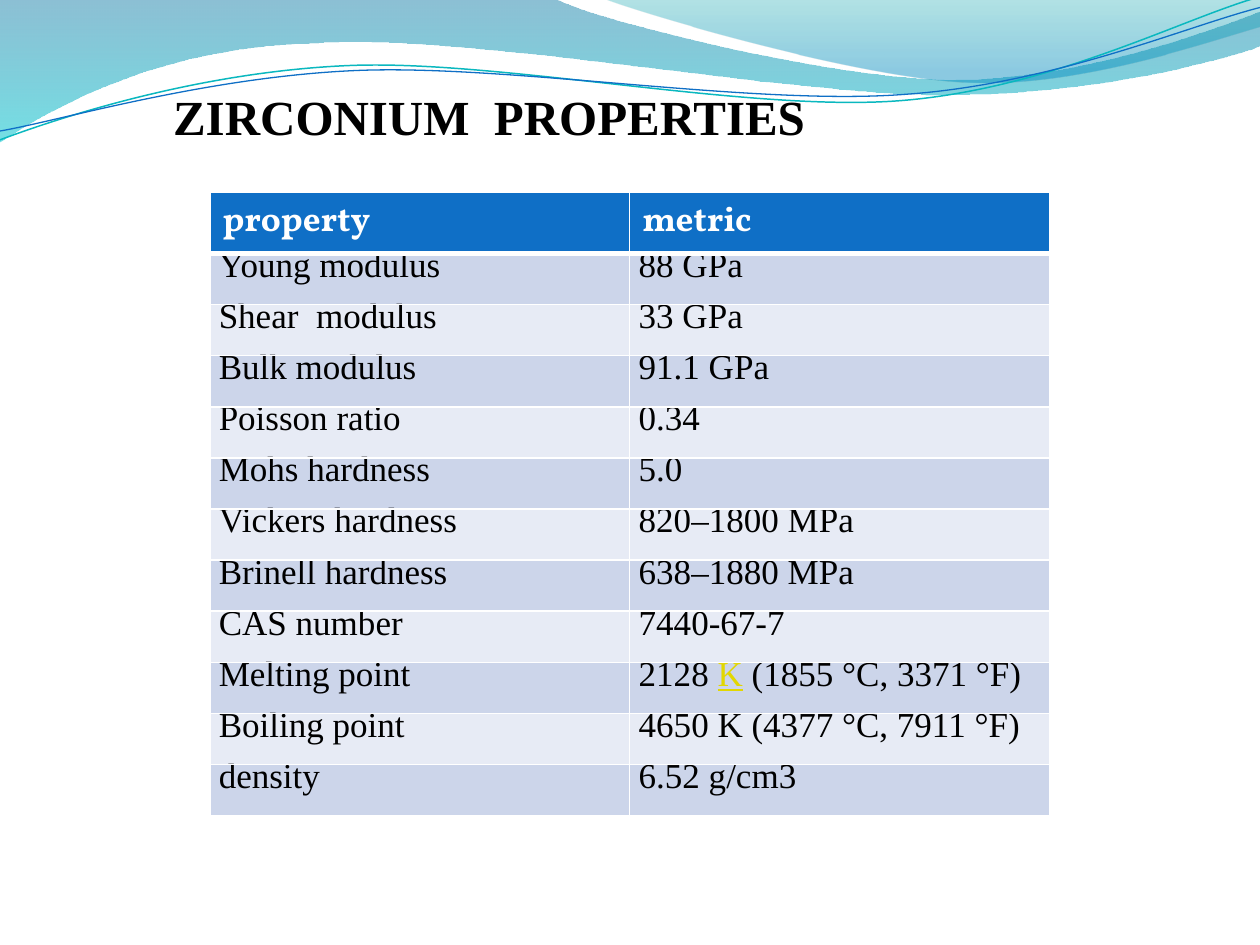
from math import cos, radians, sin

from lxml.etree import SubElement
from pptx import Presentation
from pptx.dml.color import RGBColor
from pptx.enum.text import MSO_ANCHOR, MSO_AUTO_SIZE, PP_ALIGN
from pptx.oxml import parse_xml
from pptx.oxml.ns import nsdecls, qn
from pptx.util import Cm, Pt

COLORS = {
    "head": "0F6FC6", "odd": "CCD5EA", "even": "E7EBF5",
    "white": "FFFFFF", "text": "000000", "link": "E2D700",
}
SERIF, HEAD = "Times New Roman", "Vollkorn"
TITLE = "ZIRCONIUM  PROPERTIES"
HEADER = ("property", "metric")
LINK = "K"
# A tuple holds the runs of a cell that is not uniform
ROWS = [
    ("Young modulus", "88 GPa"),
    ("Shear  modulus", "33 GPa"),
    ("Bulk modulus", "91.1 GPa"),
    ("Poisson ratio", "0.34"),
    ("Mohs hardness", "5.0"),
    ("Vickers hardness", "820–1800 MPa"),
    ("Brinell hardness", "638–1880 MPa"),
    ("CAS number", "7440-67-7"),
    ("Melting point", ("2128 ", LINK, " (1855 °C, 3371 °F)")),
    ("Boiling point", "4650 K (4377 °C, 7911 °F)"),
    ("density", "6.52 g/cm3"),
]

# Wave outlines in inches: a pair is a corner, six numbers are a Bezier curve
BANDS = [
    ([(0, 0), (4.4, -0.01), (4.76, 0.17, 6.64, 0.63, 7.58, 0.63),
      (8.53, 0.63, 9.58, 0.26, 10, 0.09), (10.01, 0.36),
      (9.83, 0.44, 8.7, 0.76, 7.46, 0.75), (6.22, 0.75, 3.82, 0.28, 2.57, 0.34),
      (1.29, 0.36, 0.46, 0.83, -0.01, 1.13), (0, 0)],
     [(0, "0074A1", 45), (1, "00C6CF", 55)]),
    ([(4.79, -0.01), (5.09, 0.11, 6.82, 0.62, 7.69, 0.65),
      (8.56, 0.69, 9.61, 0.32, 10, 0.21), (10, 0), (4.79, -0.01)],
     [(0, "00A1A9", 30), (0.8, "008BBF", 45)]),
]
# Each line: outline as it lies on the slide, its centre, colour and width
LINES = [
    ([(0, 1.11), (0.48, 0.93, 1.58, 0.57, 2.77, 0.52),
      (3.95, 0.47, 5.93, 0.89, 7.13, 0.8), (8.33, 0.71, 9.38, 0.15, 9.98, -0.02)],
     (4.99, 0.58), "0AB8BF", 0.85),
    ([(0, 1.04), (0.47, 0.96, 1.64, 0.61, 2.83, 0.56),
      (4.03, 0.51, 5.97, 0.84, 7.17, 0.75), (8.36, 0.67, 9.41, 0.21, 10, 0.06)],
     (5, 0.59), "0F6FC6", 0.75),
]
TILT = 2.7


def rgb(code):
    return RGBColor.from_string(code)


def turn(part, mid):
    """Turn the points of a part clockwise by TILT about mid."""
    c, s = cos(radians(TILT)), sin(radians(TILT))
    flat = []
    for x, y in zip(part[::2], part[1::2]):
        dx, dy = x - mid[0], y - mid[1]
        flat += [mid[0] + dx * c - dy * s, mid[1] + dx * s + dy * c]
    return tuple(flat)


def draw(slide, parts, close):
    """Build the outline from all points, then join triples into curves."""
    start, *rest = [(Cm(2.54 * x), Cm(2.54 * y)) for part in parts
                    for x, y in zip(part[::2], part[1::2])]
    pen = slide.shapes.build_freeform(*start)
    pen.add_line_segments(rest, close=close)
    shape = pen.convert_to_shape()
    shape.shadow.inherit = False
    legs = iter(list(shape.element.iter(qn("a:lnTo"))))
    for part in parts[1:]:
        leg = next(legs)
        if len(part) == 6:
            leg.addprevious(parse_xml(f'<a:cubicBezTo {nsdecls("a")}/>'))
            curve = leg.getprevious()
            for piece in (leg, next(legs), next(legs)):
                curve.append(piece[0])
                piece.getparent().remove(piece)
    return shape


def style(run, font, size, color, bold=False):
    run.font.name, run.font.size, run.font.bold = font, Pt(size), bold
    run.font.color.rgb = rgb(color)


def border(cell, top, bottom):
    props = cell._tc.get_or_add_tcPr()
    for spot, (side, width) in enumerate(zip("LRTB", (1, 1, top, bottom))):
        props.insert(spot, parse_xml(
            f'<a:ln{side} {nsdecls("a")} w="{Pt(width)}"><a:solidFill>'
            f'<a:srgbClr val="{COLORS["white"]}"/></a:solidFill></a:ln{side}>'))


def fill_cell(cell, value, row):
    pieces = (value,) if isinstance(value, str) else value
    para = cell.text_frame.paragraphs[0]
    for piece in pieces:
        run = para.add_run()
        run.text = piece
        if row == 0:
            style(run, HEAD, 20, COLORS["white"], True)
        else:
            style(run, SERIF, 20, COLORS["link" if piece == LINK else "text"])
            run.font.underline = piece == LINK
    if row:
        para.line_spacing = Pt(18)
        para.space_before = para.space_after = Pt(6)
        cell.margin_left = cell.margin_right = Cm(0.18)
        cell.margin_top = cell.margin_bottom = 0
    cell.fill.solid()
    tone = "head" if row == 0 else "odd" if row % 2 else "even"
    cell.fill.fore_color.rgb = rgb(COLORS[tone])
    border(cell, 3 if row == 1 else 1, 3 if row == 0 else 1)


def main():
    deck = Presentation()
    deck.slide_width, deck.slide_height = Cm(25.4), Cm(19.05)
    slide = deck.slides.add_slide(deck.slide_layouts[5])

    # Waves along the top
    for parts, stops in BANDS:
        band = draw(slide, parts, True)
        band.line.fill.background()
        band.fill.gradient()
        band.fill.gradient_angle = 270
        for stop, (place, color, _) in zip(band.fill.gradient_stops, stops):
            stop.position = place
            stop.color.rgb = rgb(color)
        codes = list(band.element.spPr.iter(qn("a:srgbClr")))
        for code, (_, _, alpha) in zip(codes, stops):
            SubElement(code, qn("a:alpha"), val=str(alpha * 1000))
    for parts, mid, color, width in LINES:
        line = draw(slide, [turn(part, mid) for part in parts], False)
        line.rotation = 360 - TILT
        line.fill.background()
        line.line.color.rgb = rgb(color)
        line.line.width = Pt(width)

    # Title, in front of the waves
    title = slide.shapes.title
    title.element.getparent().append(title.element)
    title.left, title.top, title.width, title.height = map(Cm, (1.27, 1.14, 23.06, 1.8))
    frame = title.text_frame
    frame.text = TITLE
    frame.auto_size = MSO_AUTO_SIZE.NONE
    frame.vertical_anchor = MSO_ANCHOR.BOTTOM
    frame.margin_left, frame.margin_right = Cm(2.22), 0
    frame.margin_top, frame.margin_bottom = Cm(0.13), 0
    frame.paragraphs[0].alignment = PP_ALIGN.LEFT
    style(frame.paragraphs[0].runs[0], SERIF, 28, COLORS["text"], True)

    # Table of properties
    data = [HEADER] + ROWS
    table = slide.shapes.add_table(len(data), len(HEADER), Cm(4.23), Cm(3.87),
                                   Cm(16.93), Cm(1.03 * len(data))).table
    for row, values in enumerate(data):
        for col, value in enumerate(values):
            fill_cell(table.cell(row, col), value, row)

    deck.save("out.pptx")


if __name__ == "__main__":
    main()
